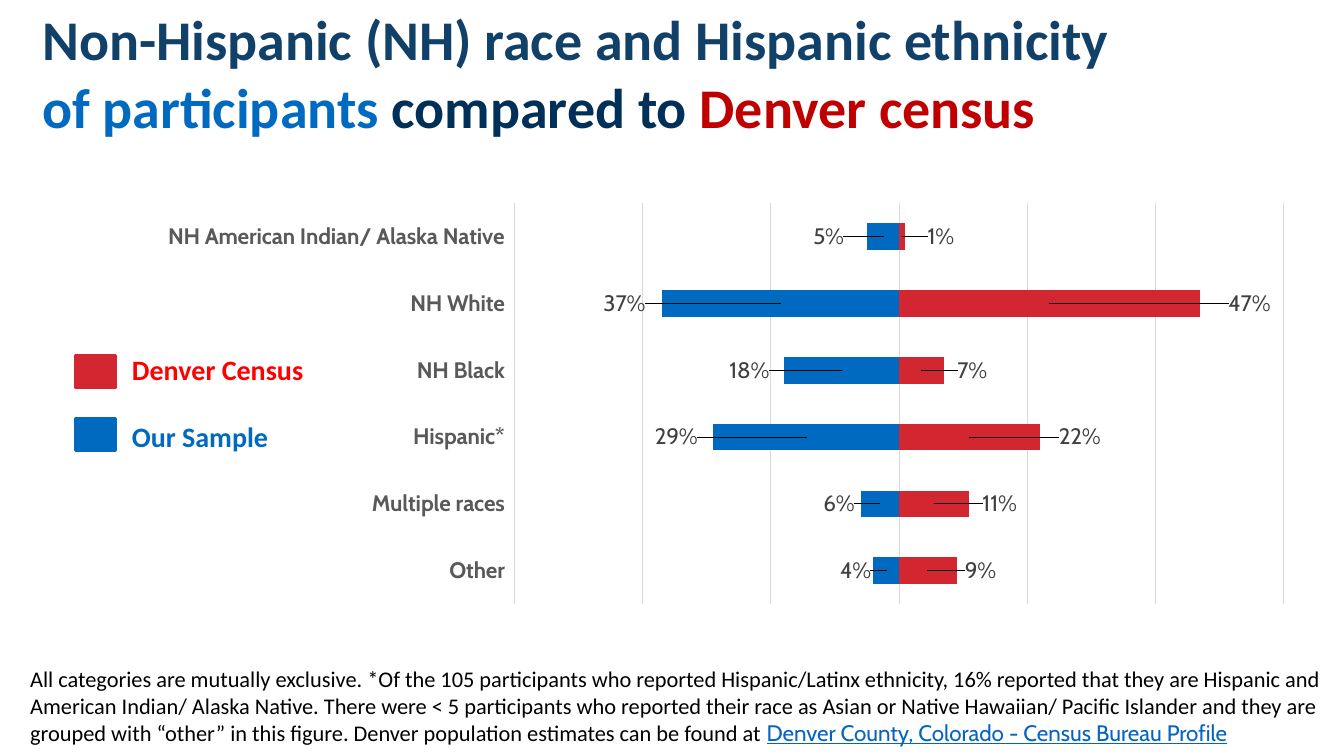
"""Build a slide comparing participant race and ethnicity with the Denver census."""
from lxml import etree
from pptx import Presentation
from pptx.chart.data import CategoryChartData
from pptx.dml.color import RGBColor
from pptx.enum.chart import XL_CHART_TYPE, XL_LABEL_POSITION, XL_TICK_LABEL_POSITION, XL_TICK_MARK
from pptx.enum.shapes import MSO_SHAPE
from pptx.oxml.ns import qn
from pptx.util import Inches, Pt

STACKED_BAR = XL_CHART_TYPE.BAR_STACKED
CENTERED = XL_LABEL_POSITION.CENTER
LOW = XL_TICK_LABEL_POSITION.LOW
NO_TICK = XL_TICK_MARK.NONE
RECTANGLE = MSO_SHAPE.RECTANGLE

THEME = {
    "body": "Calibri", "accent": "Cabin",
    "title_size": 40, "legend_size": 20, "small_size": 16,
    "heading": "114069", "navy": "003057", "blue": "006AC1", "census": "C00000",
    "red": "D22730", "legend_red": "FF0000", "black": "000000", "link": "0563C1",
    "grid": "D9D9D9", "category": "595959", "value": "404040",
}

TITLE = [
    [("Non-Hispanic (NH) race and Hispanic ethnicity", "heading")],
    [("of participants ", "blue"), ("compared to ", "navy"), ("Denver census", "census")],
]
FOOTNOTE = (
    "All categories are mutually exclusive. *Of the 105 participants who reported "
    "Hispanic/Latinx ethnicity, 16% reported that they are Hispanic and American Indian/ "
    "Alaska Native. There were < 5 participants who reported their race as Asian or Native "
    "Hawaiian/ Pacific Islander and they are grouped with “other” in this figure. "
    "Denver population estimates can be found at "
)
SOURCE = "Denver County, Colorado - Census Bureau Profile"
LEGEND = [("Denver Census", "legend_red", "red"), ("Our Sample", "blue", "blue")]
GROUPS = ["Other", "Multiple races", "Hispanic*", "NH Black", "NH White",
          "NH American Indian/ Alaska Native"]
SERIES = [
    {"name": "Our Sample", "color": "blue", "values": [-4, -6, -29, -18, -37, -5],
     "label_at": [-6.8, -9.4, -34.8, -23.4, -42.9, -11]},
    {"name": "Denver Census", "color": "red", "values": [9, 11, 22, 7, 47, 1],
     "label_at": [12.7, 15.7, 28.2, 11.4, 54.7, 6.5]},
]
AXIS_LIMIT, AXIS_STEP = 60, 20
PLOT_AREA = {"x": 0.32, "y": 0.02, "w": 0.66, "h": 0.96}


def color(key):
    return RGBColor.from_string(THEME[key])


def style(font, size, key, face="body", bold=False):
    font.size, font.name, font.bold = Pt(THEME[size]), THEME[face], bold
    font.color.rgb = color(key)


def add_text(slide, box, paragraphs, size, bold=False):
    frame = slide.shapes.add_textbox(*map(Inches, box)).text_frame
    frame.word_wrap = True
    for index, pieces in enumerate(paragraphs):
        paragraph = frame.paragraphs[0] if index == 0 else frame.add_paragraph()
        for text, key in pieces:
            run = paragraph.add_run()
            run.text = text
            style(run.font, size, key, bold=bold)
    return frame


def manual_layout(**settings):
    layout = etree.Element(qn("c:layout"))
    manual = etree.SubElement(layout, qn("c:manualLayout"))
    for tag, value in settings.items():
        etree.SubElement(manual, qn(f"c:{tag}")).set("val", str(value))
    return layout


def add_labels(series, content):
    per_unit = PLOT_AREA["w"] / (2 * AXIS_LIMIT)
    for index, (value, place) in enumerate(zip(content["values"], content["label_at"])):
        label = series.points[index].data_label
        style(label.font, "small_size", "value", "accent")
        label.position = CENTERED
        offset = round((place - value / 2) * per_unit, 4)
        element = series._element.xpath(f".//c:dLbl[c:idx/@val='{index}']")[0]
        element.insert(1, manual_layout(x=offset, y=0))


def add_comparison(slide):
    data = CategoryChartData(number_format='0"%";0"%"')
    data.categories = GROUPS
    for content in SERIES:
        data.add_series(content["name"], content["values"])
    box = map(Inches, (1.41, 1.93, 11.55, 4.15))
    chart = slide.shapes.add_chart(STACKED_BAR, *box, data).chart
    chart.has_legend = chart.has_title = False
    style(chart.font, "small_size", "black", "accent")

    plot = chart.plots[0]
    plot.gap_width, plot.overlap, plot.vary_by_categories = 150, 100, False
    for series, content in zip(plot.series, SERIES):
        series.format.fill.solid()
        series.format.fill.fore_color.rgb = color(content["color"])
        series.invert_if_negative = False
        add_labels(series, content)

    groups, scale = chart.category_axis, chart.value_axis
    groups.tick_label_position = LOW
    groups.major_tick_mark = groups.minor_tick_mark = NO_TICK
    style(groups.tick_labels.font, "small_size", "category", "accent", True)
    scale.minimum_scale, scale.maximum_scale = -AXIS_LIMIT, AXIS_LIMIT
    scale.major_unit, scale.visible = AXIS_STEP, False
    scale.has_major_gridlines = True
    for line in (groups.format.line, scale.major_gridlines.format.line):
        line.color.rgb, line.width = color("grid"), Pt(0.75)

    plot_area = chart._chartSpace.xpath(".//c:plotArea")[0]
    for default in plot_area.findall(qn("c:layout")):
        plot_area.remove(default)
    plot_area.insert(0, manual_layout(layoutTarget="inner", xMode="edge", yMode="edge",
                                      **PLOT_AREA))


def add_legend(slide):
    names = [[(name, key)] for name, key, _ in LEGEND]
    frame = add_text(slide, (1.21, 3.45, 1.98, 1.11), names, "legend_size", True)
    frame.paragraphs[1].space_before = Pt(24)
    for index, (_, _, key) in enumerate(LEGEND):
        box = map(Inches, (0.75, 3.53 + index * 0.62, 0.4, 0.32))
        swatch = slide.shapes.add_shape(RECTANGLE, *box)
        swatch.shadow.inherit = False
        swatch.fill.solid()
        swatch.fill.fore_color.rgb = swatch.line.color.rgb = color(key)
        swatch.line.width = Pt(2)


def add_footnote(slide):
    pieces = [(FOOTNOTE, "black"), (SOURCE, "link")]
    frame = add_text(slide, (0.17, 6.53, 13.24, 0.94), [pieces], "small_size")
    frame.margin_left = frame.margin_right = Inches(0.13)
    frame.margin_top = frame.margin_bottom = Inches(0.07)
    source = frame.paragraphs[0].runs[-1].font
    source.name, source.underline = THEME["accent"], True


def main():
    deck = Presentation()
    deck.slide_width, deck.slide_height = Inches(13.33), Inches(7.5)
    slide = deck.slides.add_slide(deck.slide_layouts[6])
    add_text(slide, (0.32, 0, 13.01, 1.49), TITLE, "title_size", True)
    add_footnote(slide)
    add_comparison(slide)
    add_legend(slide)
    deck.save("out.pptx")


if __name__ == "__main__":
    main()
